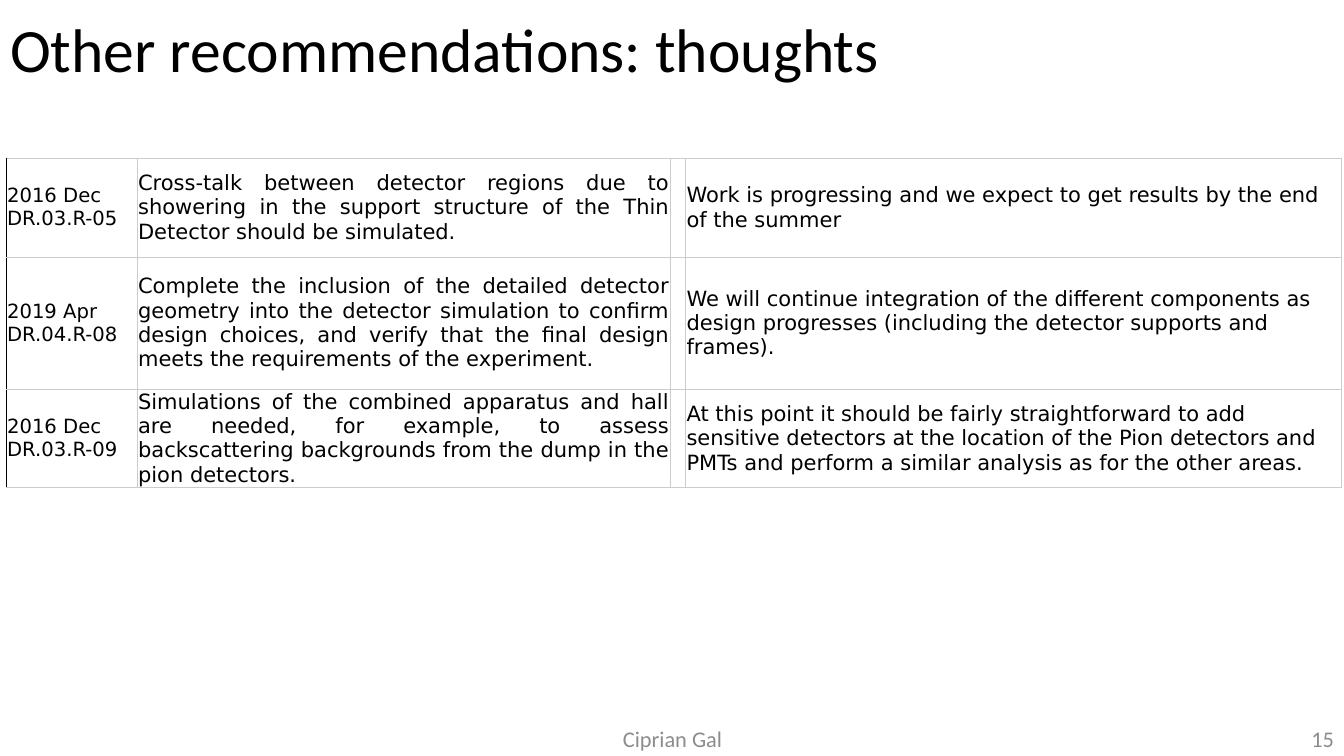
from dataclasses import dataclass

from lxml.etree import SubElement
from pptx import Presentation
from pptx.dml.color import RGBColor
from pptx.enum.text import MSO_ANCHOR, PP_ALIGN
from pptx.oxml.ns import qn
from pptx.util import Inches, Pt


@dataclass(frozen=True)
class Theme:
    heading_font: str = "Calibri"
    table_font: str = "DejaVu Sans"
    ink: str = "000000"
    muted: str = "8C8C8C"
    grid: str = "CCCCCC"
    title_size: float = 44
    footer_size: float = 16
    label_size: float = 14
    cell_size: float = 15
    border_width: float = 0.6


THEME = Theme()
COLUMN_WIDTHS = (1.3, 5.29, 0.15, 6.5)
ROW_HEIGHTS = (0.98, 1.31, 0.98)
# Each row: label, recommendation, spacer, response
RECOMMENDATIONS = (
    ("2016 Dec DR.03.R-05",
     "Cross-talk between detector regions due to showering in the support "
     "structure of the Thin Detector should be simulated.",
     "",
     "Work is progressing and we expect to get results by the end of the summer"),
    ("2019 Apr DR.04.R-08",
     "Complete the inclusion of the detailed detector geometry into the detector "
     "simulation to confirm design choices, and verify that the final design "
     "meets the requirements of the experiment.",
     "",
     "We will continue integration of the different components as design "
     "progresses (including the detector supports and frames)."),
    ("2016 Dec DR.03.R-09",
     "Simulations of the combined apparatus and hall are needed, for example, to "
     "assess backscattering backgrounds from the dump in the pion detectors.",
     "",
     "At this point it should be fairly straightforward to add sensitive detectors "
     "at the location of the Pion detectors and PMTs and perform a similar "
     "analysis as for the other areas."),
)


def format_paragraph(paragraph, font_name, size, color, alignment):
    paragraph.alignment = alignment
    paragraph.font.name = font_name
    paragraph.font.size = Pt(size)
    paragraph.font.color.rgb = RGBColor.from_string(color)


def set_title(slide, text):
    title = slide.shapes.title
    title.left, title.top = Inches(0), Inches(0)
    title.width, title.height = Inches(13.33), Inches(1.04)
    title.text_frame.text = text
    title.text_frame.vertical_anchor = MSO_ANCHOR.MIDDLE
    paragraph = title.text_frame.paragraphs[0]
    paragraph.line_spacing = 0.9
    format_paragraph(paragraph, THEME.heading_font, THEME.title_size,
                     THEME.ink, PP_ALIGN.LEFT)


def add_footer(slide, text, left, width, alignment):
    box = slide.shapes.add_textbox(Inches(left), Inches(7.19), Inches(width), Inches(0.27))
    frame = box.text_frame
    frame.word_wrap = True
    frame.vertical_anchor = MSO_ANCHOR.MIDDLE
    frame.text = text
    format_paragraph(frame.paragraphs[0], THEME.heading_font, THEME.footer_size,
                     THEME.muted, alignment)


def set_borders(cell, left_color):
    properties = cell._tc.get_or_add_tcPr()
    sides = {"a:lnL": left_color, "a:lnR": THEME.grid, "a:lnT": THEME.grid, "a:lnB": THEME.grid}
    for tag, color in sides.items():
        line = SubElement(properties, qn(tag), w=str(Pt(THEME.border_width)))
        fill = SubElement(line, qn("a:solidFill"))
        SubElement(fill, qn("a:srgbClr"), val=color)


def fill_cell(cell, text, column):
    is_label = column == 0
    set_borders(cell, THEME.ink if is_label else THEME.grid)
    cell.fill.background()
    cell.margin_left = cell.margin_right = Inches(0.01)
    cell.margin_top = cell.margin_bottom = Inches(0)
    cell.vertical_anchor = MSO_ANCHOR.MIDDLE
    cell.text = text
    format_paragraph(cell.text_frame.paragraphs[0], THEME.table_font,
                     THEME.label_size if is_label else THEME.cell_size, THEME.ink,
                     PP_ALIGN.JUSTIFY if column == 1 else PP_ALIGN.LEFT)


def add_recommendations(slide):
    frame = slide.shapes.add_table(
        len(ROW_HEIGHTS), len(COLUMN_WIDTHS), Inches(0.06), Inches(1.57),
        Inches(sum(COLUMN_WIDTHS)), Inches(sum(ROW_HEIGHTS)))
    table = frame.table
    table.first_row = table.horz_banding = False
    for column, width in zip(table.columns, COLUMN_WIDTHS):
        column.width = Inches(width)
    for row, height, texts in zip(table.rows, ROW_HEIGHTS, RECOMMENDATIONS):
        row.height = Inches(height)
        for column, (cell, text) in enumerate(zip(row.cells, texts)):
            fill_cell(cell, text, column)


def main():
    presentation = Presentation()
    presentation.slide_width, presentation.slide_height = Inches(13.33), Inches(7.5)
    # Title Only layout
    slide = presentation.slides.add_slide(presentation.slide_layouts[5])
    set_title(slide, "Other recommendations: thoughts")
    add_recommendations(slide)
    # Footer: author and page number
    add_footer(slide, "Ciprian Gal", 4.42, 4.5, PP_ALIGN.CENTER)
    add_footer(slide, "15", 10.33, 3, PP_ALIGN.RIGHT)
    presentation.save("out.pptx")


if __name__ == "__main__":
    main()
